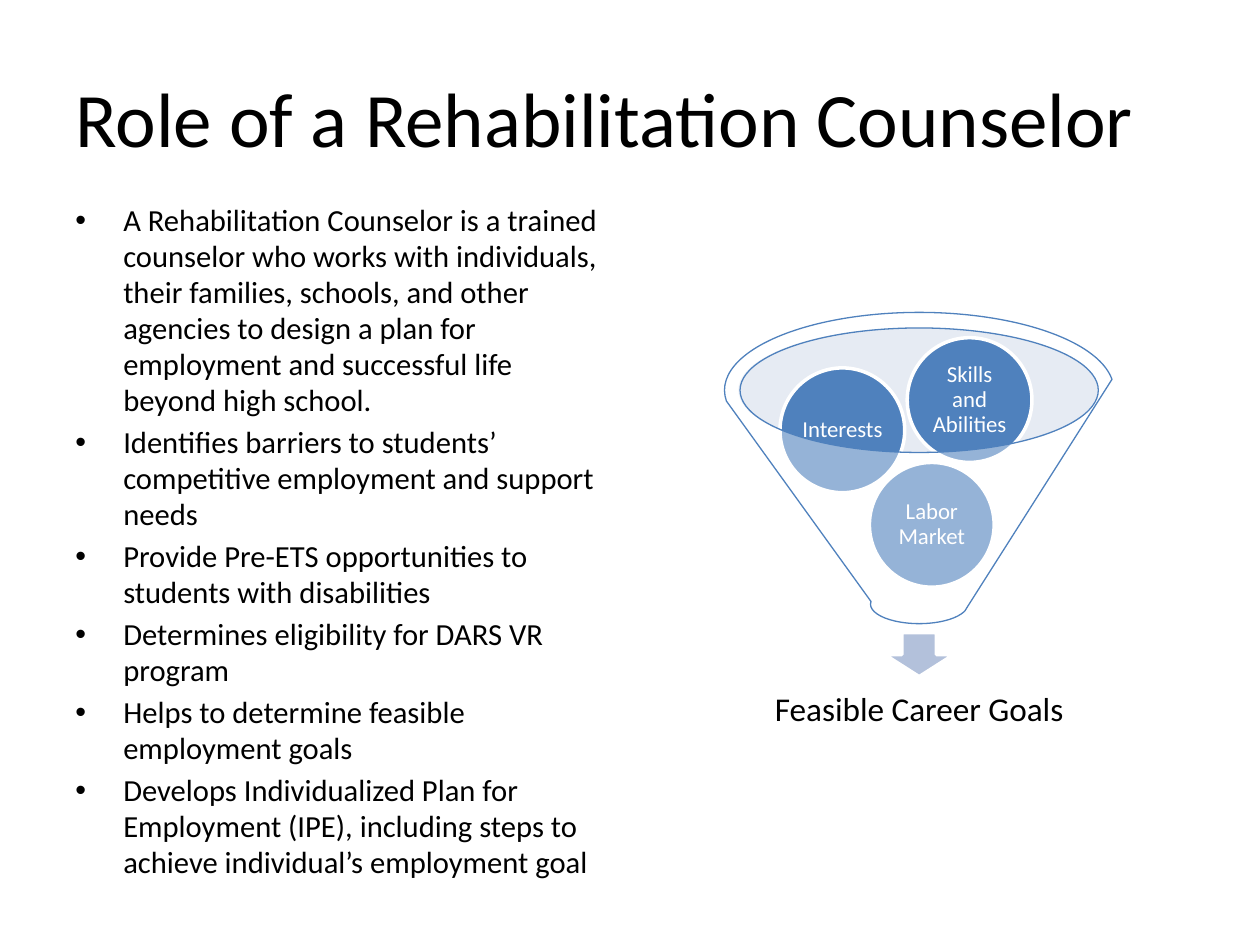
from lxml import etree
from pptx import Presentation, util as u
from pptx.dml.color import RGBColor
from pptx.enum import shapes, text
from pptx.oxml.ns import qn

COLUMNS, ROWS = 100, 75
CELL = u.Inches(0.1)
FONT = "Calibri"
BLACK = RGBColor(0x00, 0x00, 0x00)
WHITE = RGBColor(0xFF, 0xFF, 0xFF)
BLUE = RGBColor(0x4F, 0x81, 0xBD)
MOUTH_BLUE = RGBColor(0xC2, 0xCD, 0xE1)
ARROW_BLUE = RGBColor(0xB3, 0xC1, 0xDB)

DUTIES = [
    "A Rehabilitation Counselor is a trained counselor who works with individuals, "
    "their families, schools, and other agencies to design a plan for employment "
    "and successful life beyond high school.",
    "Identifies barriers to students’ competitive employment and support needs",
    "Provide Pre-ETS opportunities to students with disabilities",
    "Determines eligibility for DARS VR program",
    "Helps to determine feasible employment goals",
    "Develops Individualized Plan for Employment (IPE), including steps to achieve "
    "individual’s employment goal",
]
FACTOR_SIZE = 9.9
FACTORS = [  # label, column, row
    ("Labor Market", 69, 36.7),
    ("Interests", 61.9, 29.2),
    ("Skills and Abilities", 72, 26.8),
]


def place(*cells):
    """Turn column, row, columns wide and rows high into lengths."""
    return [round(n * CELL) for n in cells]


def style(paragraph, size, color, align=text.PP_ALIGN.LEFT, spacing=1.0):
    paragraph.alignment = align
    paragraph.line_spacing = spacing
    font = paragraph.font
    font.name, font.size, font.color.rgb = FONT, u.Pt(size), color


def set_margins(frame, inches):
    margin = u.Inches(inches)
    frame.margin_left = frame.margin_right = margin
    frame.margin_top = frame.margin_bottom = margin


def add_text(slide, area, wording, anchor=text.MSO_ANCHOR.MIDDLE):
    frame = slide.shapes.add_textbox(*place(*area)).text_frame
    frame.word_wrap = True
    frame.vertical_anchor = anchor
    frame.text = wording
    return frame


def add_bullets(slide, area, items):
    frame = add_text(slide, area, "\n".join(items), text.MSO_ANCHOR.TOP)
    for index, paragraph in enumerate(frame.paragraphs):
        properties = paragraph._p.get_or_add_pPr()
        indent = u.Inches(0.38)
        properties.set("marL", str(indent))
        properties.set("indent", str(-indent))
        etree.SubElement(properties, qn("a:buFont"), typeface="Arial")
        etree.SubElement(properties, qn("a:buChar"), char="•")
        style(paragraph, 17.5, BLACK, spacing=0.98)
        if index:
            paragraph.space_before = u.Pt(3.5)


def add_preset(slide, preset, area, fill, line=None, width=2, opacity=100):
    shape = slide.shapes.add_shape(preset, *place(*area))
    shape.shadow.inherit = False
    shape.fill.solid()
    shape.fill.fore_color.rgb = fill
    if opacity < 100:
        color = shape.fill._xPr.find(qn("a:solidFill"))[0]
        etree.SubElement(color, qn("a:alpha"), val=str(opacity * 1000))
    if line is None:
        shape.line.fill.background()
    else:
        shape.line.color.rgb = line
        shape.line.width = u.Pt(width)
    return shape


def add_factor(slide, label, column, row):
    circle = add_preset(slide, shapes.MSO_SHAPE.OVAL,
                        (column, row, FACTOR_SIZE, FACTOR_SIZE), BLUE, WHITE)
    frame = circle.text_frame
    frame.word_wrap = True
    frame.vertical_anchor = text.MSO_ANCHOR.MIDDLE
    set_margins(frame, 0.02)
    frame.text = label
    style(frame.paragraphs[0], 13, WHITE, text.PP_ALIGN.CENTER, 0.9)


def add_career_funnel(slide):
    """Draw from back to front, so that the funnel veils the factors."""
    preset = shapes.MSO_SHAPE
    add_preset(slide, preset.OVAL, (58.6, 26, 28.5, 9.9), MOUTH_BLUE, opacity=40)
    add_preset(slide, preset.DOWN_ARROW, (70.2, 50.2, 5.5, 3.5), ARROW_BLUE, WHITE)
    goal = add_text(slide, (59.7, 53.1, 26.5, 6.6), "Feasible Career Goals")
    set_margins(goal, 0.15)
    style(goal.paragraphs[0], 19, BLACK, text.PP_ALIGN.CENTER, 0.9)
    for factor in FACTORS:
        add_factor(slide, *factor)
    add_preset(slide, preset.FUNNEL, (57.5, 24.8, 30.9, 24.7), WHITE, BLUE, 0.75, 40)


def main():
    deck = Presentation()
    deck.slide_width, deck.slide_height = place(COLUMNS, ROWS)
    slide = deck.slides.add_slide(deck.slide_layouts[6])
    title = add_text(slide, (5, 3, 90, 12.5), "Role of a Rehabilitation Counselor")
    style(title.paragraphs[0], 44, BLACK)
    add_bullets(slide, (5, 15.6, 44.2, 48.3), DUTIES)
    add_career_funnel(slide)
    deck.save("out.pptx")


if __name__ == "__main__":
    main()
